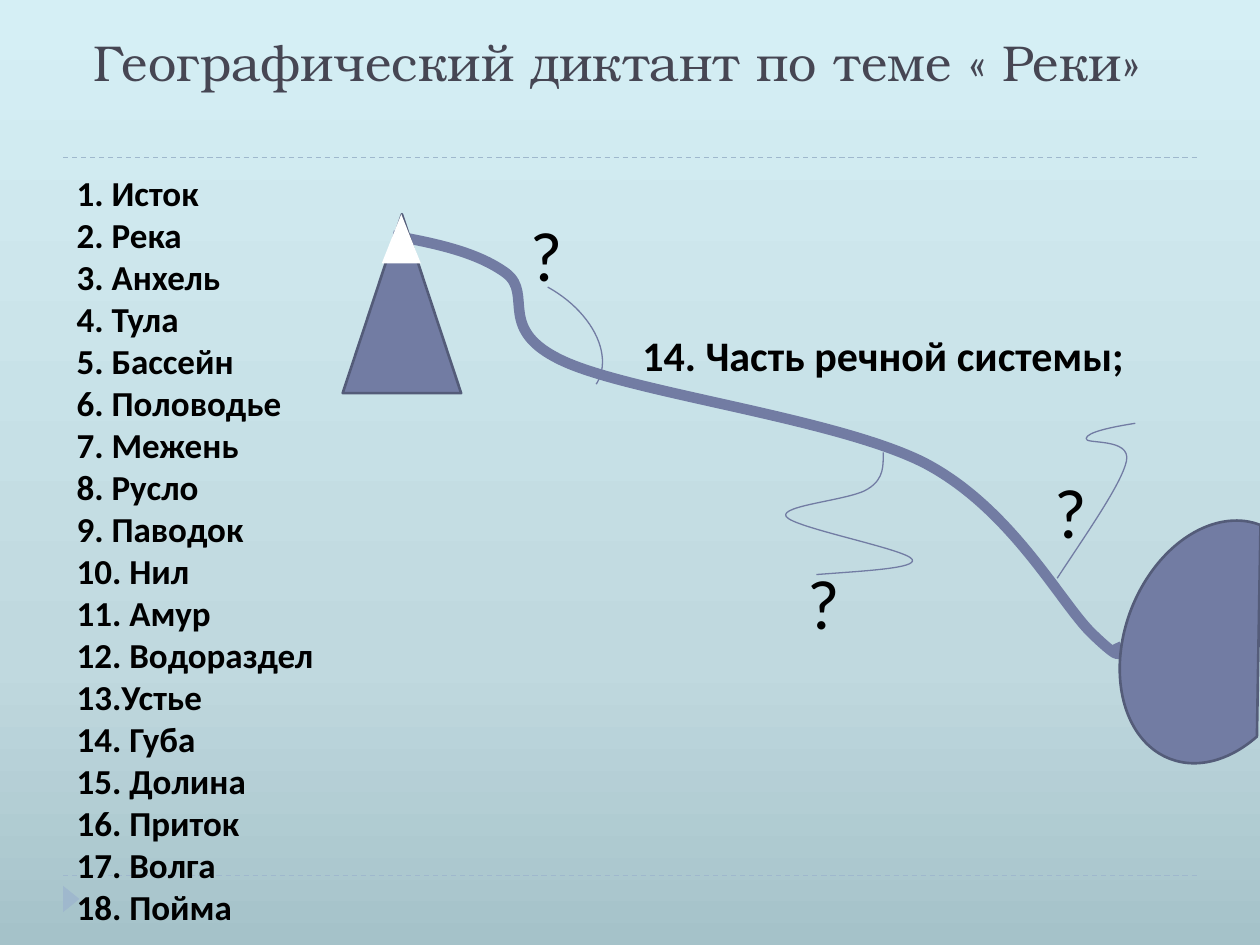
from copy import deepcopy
from math import cos, radians, sin
from pptx import Presentation
from pptx.dml.color import RGBColor
from pptx.enum.dml import MSO_LINE
from pptx.enum.shapes import MSO_CONNECTOR, MSO_SHAPE
from pptx.enum.text import MSO_ANCHOR, PP_ALIGN
from pptx.oxml.ns import qn
from pptx.util import Inches, Pt
from lxml import etree

COLS, ROWS = 10, 7.5
CELL = Inches(1)
TOP, MIDDLE = MSO_ANCHOR.TOP, MSO_ANCHOR.MIDDLE
LEFT, CENTER = PP_ALIGN.LEFT, PP_ALIGN.CENTER
STRAIGHT, DASH = MSO_CONNECTOR.STRAIGHT, MSO_LINE.DASH
PEAK, ARC, CHORD = MSO_SHAPE.ISOSCELES_TRIANGLE, MSO_SHAPE.ARC, MSO_SHAPE.CHORD

BLACK = RGBColor(0, 0, 0)
WHITE = RGBColor(255, 255, 255)
SLATE = RGBColor(0x46, 0x46, 0x53)
PALE = RGBColor(0x9F, 0xB8, 0xCD)
WATER = RGBColor(0x72, 0x7C, 0xA3)
EDGE = RGBColor(0x54, 0x5C, 0x79)
SKY = [
    (0, RGBColor(0xA5, 0xC2, 0xC9)),
    (0.3, RGBColor(0xC0, 0xD9, 0xDF)),
    (1, RGBColor(0xD5, 0xEF, 0xF5)),
]

TERMS = [
    "1. Исток", "2. Река", "3. Анхель", "4. Тула", "5. Бассейн", "6. Половодье",
    "7. Межень", "8. Русло", "9. Паводок", "10. Нил", "11. Амур",
    "12. Водораздел", "13.Устье", "14. Губа", "15. Долина", "16. Приток",
    "17. Волга", "18. Пойма",
]

RIVER = [
    (3.12, 1.87),
    (3.45, 1.93), (3.79, 2), (4.02, 2.17),
    (4.24, 2.34), (3.93, 2.62), (4.48, 2.87),
    (5.03, 3.12), (6.63, 3.32), (7.33, 3.67),
    (8.03, 4.03), (8.42, 4.79), (8.67, 5.03),
    (8.92, 5.27), (8.89, 5.19), (8.85, 5.11),
]
MID, SLOPE = (6.12, 3.42), 33.3
SOUTH = [
    (7.01, 3.59),
    (7.01, 3.69), (7.02, 3.8), (6.89, 3.88),
    (6.76, 3.97), (6.18, 4.01), (6.24, 4.1),
    (6.3, 4.19), (7.2, 4.36), (7.24, 4.44),
    (7.28, 4.51), (6.88, 4.53), (6.48, 4.56),
]
EAST = [
    (9.01, 3.36),
    (8.82, 3.39), (8.63, 3.43), (8.62, 3.48),
    (8.6, 3.53), (8.98, 3.47), (8.94, 3.66),
    (8.9, 3.84), (8.64, 4.21), (8.39, 4.59),
]
MARKS = [(6.18, 4.38, 0.71, 0.79), (3.98, 1.62, 0.71, 0.79), (8.15, 3.67, 0.69, 0.77)]


def scale(box):
    return [round(n * CELL) for n in box]


def paint_sky(slide):
    fill = slide.background.fill
    fill.gradient()
    fill.gradient_angle = 90
    stops = next(slide.element.iter(qn("a:gsLst")))
    stops.insert(1, deepcopy(stops[0]))
    for stop, (place, color) in zip(fill.gradient_stops, SKY):
        stop.position = place
        stop.color.rgb = color


def add_rule(slide, row):
    rule = slide.shapes.add_connector(STRAIGHT, *scale((0.5, row, COLS - 0.5, row)))
    rule.line.color.rgb = PALE
    rule.line.width = Pt(0.75)
    rule.line.dash_style = DASH
    etree.SubElement(rule.element.spPr, qn("a:effectLst"))


def style(shape, fill=None, line=None, width=0.75):
    shape.shadow.inherit = False
    if fill is None:
        shape.fill.background()
    else:
        shape.fill.solid()
        shape.fill.fore_color.rgb = fill
    if line is None:
        shape.line.fill.background()
    else:
        shape.line.color.rgb = line
        shape.line.width = Pt(width)


def add_form(slide, kind, box, turn=0, **look):
    form = slide.shapes.add_shape(kind, *scale(box))
    form.rotation = turn
    style(form, **look)
    return form


def level(knots, mid, turn):
    c, s = cos(radians(turn)), sin(radians(turn))
    gaps = [(x - mid[0], y - mid[1]) for x, y in knots]
    return [(mid[0] + x * c + y * s, mid[1] + y * c - x * s) for x, y in gaps]


def add_stream(slide, knots, width, turn=0):
    start, *rest = [scale(knot) for knot in knots]
    pen = slide.shapes.build_freeform(*start)
    pen.add_line_segments(rest, close=False)
    stream = pen.convert_to_shape()
    stream.rotation = turn
    style(stream, line=WATER, width=width)
    legs = list(stream.element.iter(qn("a:lnTo")))
    for i in range(0, len(legs), 3):
        curve = etree.Element(qn("a:cubicBezTo"))
        legs[i].addprevious(curve)
        for leg in legs[i:i + 3]:
            curve.append(leg[0])
            leg.getparent().remove(leg)


def add_text(slide, box, lines, size, font="Calibri", color=BLACK, bold=False,
             align=LEFT, anchor=TOP):
    frame = slide.shapes.add_textbox(*scale(box)).text_frame
    frame.word_wrap = True
    frame.vertical_anchor = anchor
    frame.text = "\n".join(lines)
    for para in frame.paragraphs:
        para.alignment = align
        para.font.size = Pt(size)
        para.font.name = font
        para.font.bold = bold
        para.font.color.rgb = color
    return frame


def main():
    deck = Presentation()
    deck.slide_width, deck.slide_height = scale((COLS, ROWS))
    slide = deck.slides.add_slide(deck.slide_layouts[6])
    paint_sky(slide)
    for row in (6.95, 1.25):
        add_rule(slide, row)
    add_form(slide, PEAK, (0.46, 7.07, 0.21, 0.13), 90, fill=PALE)

    title = add_text(slide, (0.5, 0.25, 9, 1), ["Географический диктант по теме « Реки»"],
                     28.8, "TeX Gyre Bonum", SLATE)
    title.margin_left = Inches(0.24)
    title.margin_top = 0
    add_text(slide, (0.51, 1.31, 5, 6.16), TERMS, 20, bold=True)
    add_text(slide, (5, 2.57, 5, 0.5), ["14. Часть речной системы;"], 24, bold=True)

    add_stream(slide, level(RIVER, MID, SLOPE), 6, SLOPE)
    bend = add_form(slide, ARC, (3.41, 2.22, 1.42, 0.94), 28.9, line=WATER)
    bend.adjustments[1] = 0.92
    for knots in (SOUTH, EAST):
        add_stream(slide, knots, 0.75)
    for box in MARKS:
        add_text(slide, box, ["?"], 40, align=CENTER, anchor=MIDDLE)

    add_form(slide, CHORD, (8.93, 4.1, 1.43, 1.99), 21.2, fill=WATER, line=EDGE, width=1.5)
    add_form(slide, PEAK, (2.72, 1.7, 0.94, 1.42), fill=WATER, line=EDGE, width=1.5)
    add_form(slide, PEAK, (3.03, 1.7, 0.31, 0.39), fill=WHITE)
    deck.save("out.pptx")


if __name__ == "__main__":
    main()
